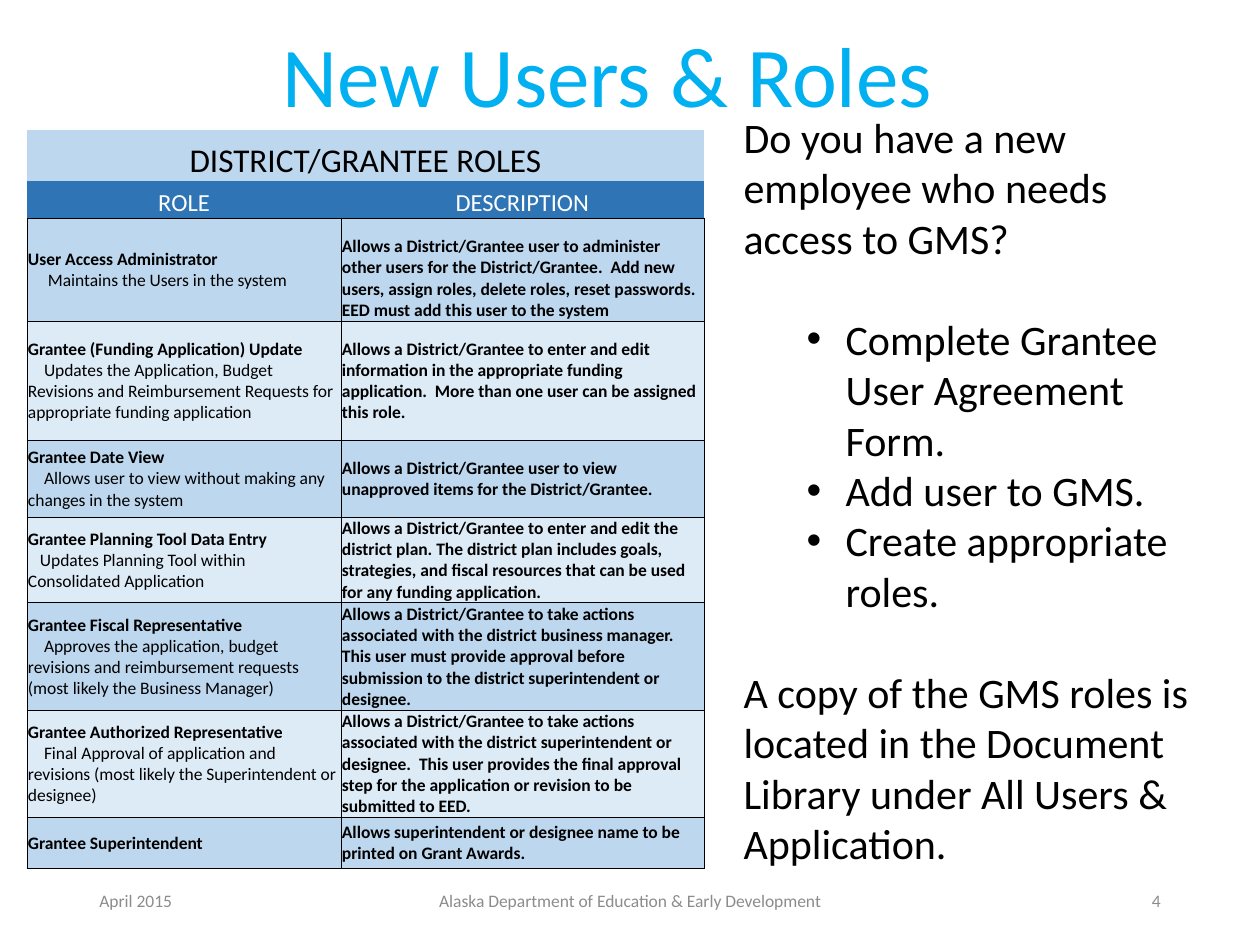
from dataclasses import dataclass

from lxml.etree import SubElement
from pptx import Presentation
from pptx.dml.color import RGBColor
from pptx.enum.text import MSO_ANCHOR, MSO_AUTO_SIZE, PP_ALIGN
from pptx.oxml.ns import qn
from pptx.util import Emu, Pt

PX_PER_INCH = 126


def px(n):
    return Emu(round(n * 914400 / PX_PER_INCH))


@dataclass(frozen=True)
class Theme:
    font: str = "Calibri"
    accent: str = "00B0F0"
    ink: str = "000000"
    white: str = "FFFFFF"
    muted: str = "8C8C8C"
    header: str = "2F75B5"
    band_dark: str = "BDD7EE"
    band_light: str = "DDEBF7"
    title: float = 48.6
    body: float = 24
    table_title: float = 19
    table_header: float = 14
    small: float = 10
    border: float = 0.5


# Role, first-line indent in px, what the role does, description
ROLES = [
    ("User Access Administrator", 20, "Maintains the Users in the system",
     "Allows a District/Grantee user to administer other users for the District/Grantee.  "
     "Add new users, assign roles, delete roles, reset passwords.  "
     "EED must add this user to the system"),
    ("Grantee (Funding Application) Update", 16,
     "Updates the Application, Budget Revisions and Reimbursement Requests for "
     "appropriate funding application",
     "Allows a District/Grantee to enter and edit information in the appropriate funding "
     "application.  More than one user can be assigned this role."),
    ("Grantee Date View", 16, "Allows user to view without making any changes in the system",
     "Allows a District/Grantee user to view unapproved items for the District/Grantee."),
    ("Grantee Planning Tool Data Entry", 12,
     "Updates Planning Tool within Consolidated Application",
     "Allows a District/Grantee to enter and edit the district plan. The district plan "
     "includes goals, strategies, and fiscal resources that can be used for any funding "
     "application."),
    ("Grantee Fiscal Representative", 16,
     "Approves the application, budget revisions and reimbursement requests "
     "(most likely the Business Manager)",
     "Allows a District/Grantee to take actions associated with the district business "
     "manager.  This user must provide approval before submission to the district "
     "superintendent or designee."),
    ("Grantee Authorized Representative", 16,
     "Final Approval of application and revisions "
     "(most likely the Superintendent or designee)",
     "Allows a District/Grantee to take actions associated with the district superintendent "
     "or designee.  This user provides the final approval step for the application or "
     "revision to be submitted to EED."),
    ("Grantee Superintendent", 0, "",
     "Allows superintendent or designee name to be printed on Grant Awards."),
]
COLS = [314, 363]
ROWS = [51, 37, 103, 119, 77, 85, 106, 106, 51]

# Text, bulleted, blank line before
BODY = [
    ("Do you have a new employee who needs access to GMS?", False, False),
    ("Complete Grantee User Agreement Form.", True, True),
    ("Add user to GMS.", True, False),
    ("Create appropriate roles.", True, False),
    ("A copy of the GMS roles is located in the Document Library under All Users & "
     "Application.", False, True),
]
FOOTER = [
    ("April 2015", 87, 284, PP_ALIGN.LEFT),
    ("Alaska Department of Education & Early Development", 417, 426, PP_ALIGN.CENTER),
    ("4", 890, 283, PP_ALIGN.RIGHT),
]


class SlideBuilder:
    def __init__(self, s, theme):
        self.s, self.theme = s, theme

    def run(self, p, text, size, color, bold=False):
        r = p.add_run()
        r.text = text
        r.font.name, r.font.size, r.font.bold = self.theme.font, Pt(size), bold
        r.font.color.rgb = RGBColor.from_string(color)

    def paragraph(self, tf, first, align=PP_ALIGN.LEFT, margin=0, indent=0):
        p = tf.paragraphs[0] if first else tf.add_paragraph()
        p.alignment = align
        pPr = p._p.get_or_add_pPr()
        pPr.set("marL", str(px(margin)))
        pPr.set("indent", str(px(indent)))
        return p

    def place(self, sp, x, y, w, h, anchor):
        sp.left, sp.top, sp.width, sp.height = map(px, (x, y, w, h))
        tf = sp.text_frame
        tf.word_wrap, tf.auto_size = True, MSO_AUTO_SIZE.NONE
        tf.vertical_anchor = anchor
        return tf

    def title(self, text, *box):
        tf = self.place(self.s.shapes.title, *box, MSO_ANCHOR.MIDDLE)
        p = self.paragraph(tf, True, PP_ALIGN.CENTER)
        p.line_spacing = 0.7
        self.run(p, text, self.theme.title, self.theme.accent)

    def body(self, items, *box):
        tf = self.place(self.s.placeholders[1], *box, MSO_ANCHOR.TOP)
        for i, (text, bulleted, gap) in enumerate(items):
            margin, indent = (102, -39) if bulleted else (0, 0)
            p = self.paragraph(tf, i == 0, margin=margin, indent=indent)
            p.space_before = Pt(29 if gap else 0)
            pPr = p._p.get_or_add_pPr()
            if bulleted:
                SubElement(pPr, qn("a:buFont"), typeface="Arial")
                SubElement(pPr, qn("a:buChar"), char="•")
            else:
                SubElement(pPr, qn("a:buNone"))
            self.run(p, text, self.theme.body, self.theme.ink)

    def footer(self, text, x, w, align):
        box = (x, 876, w, 50)
        sp = self.s.shapes.add_textbox(*map(px, box))
        tf = self.place(sp, *box, MSO_ANCHOR.MIDDLE)
        self.run(self.paragraph(tf, True, align), text, self.theme.small, self.theme.muted)

    def cell(self, cell, fill, sides, anchor):
        tcPr = cell._tc.get_or_add_tcPr()
        for side in "LRTB":
            ln = SubElement(tcPr, qn(f"a:ln{side}"), w=str(Pt(self.theme.border)))
            if side in sides:
                color = SubElement(ln, qn("a:solidFill"))
                SubElement(color, qn("a:srgbClr"), val=self.theme.ink)
            else:
                SubElement(ln, qn("a:noFill"))
        cell.fill.solid()
        cell.fill.fore_color.rgb = RGBColor.from_string(fill)
        cell.margin_left = cell.margin_right = cell.margin_top = px(1)
        cell.margin_bottom = 0
        cell.vertical_anchor = anchor
        return cell.text_frame

    def header_cell(self, cell, text, size, color, fill, sides=""):
        tf = self.cell(cell, fill, sides, MSO_ANCHOR.BOTTOM)
        if text:
            self.run(self.paragraph(tf, True, PP_ALIGN.CENTER), text, size, color)

    def roles_table(self, x, y):
        t = self.theme
        frame = self.s.shapes.add_table(len(ROWS), len(COLS), px(x), px(y),
                                        px(sum(COLS)), px(sum(ROWS)))
        table = frame.table
        table.first_row = table.horz_banding = False
        for col, w in zip(table.columns, COLS):
            col.width = px(w)
        for row, h in zip(table.rows, ROWS):
            row.height = px(h)

        # Heading rows
        table.cell(0, 0).merge(table.cell(0, 1))
        for c, text in enumerate(("DISTRICT/GRANTEE ROLES", "")):
            self.header_cell(table.cell(0, c), text, t.table_title, t.ink, t.band_dark)
        for c, text in enumerate(("ROLE", "DESCRIPTION")):
            self.header_cell(table.cell(1, c), text, t.table_header, t.white, t.header, "B")

        # One banded row per role
        for i, (role, indent, duty, description) in enumerate(ROLES):
            fill = t.band_light if i % 2 else t.band_dark
            tf = self.cell(table.cell(i + 2, 0), fill, "LRTB", MSO_ANCHOR.MIDDLE)
            self.run(self.paragraph(tf, True), role, t.small, t.ink, True)
            if duty:
                self.run(self.paragraph(tf, False, indent=indent), duty, t.small, t.ink)
            anchor = MSO_ANCHOR.MIDDLE if i else MSO_ANCHOR.BOTTOM
            tf = self.cell(table.cell(i + 2, 1), fill, "LRTB", anchor)
            self.run(self.paragraph(tf, True), description, t.small, t.ink, True)


def main():
    prs = Presentation()
    prs.slide_width, prs.slide_height = px(1260), px(945)
    slide = SlideBuilder(prs.slides.add_slide(prs.slide_layouts[1]), Theme())
    for item in FOOTER:
        slide.footer(*item)
    slide.body(BODY, 731, 105, 493, 776)
    slide.title("New Users & Roles", 40, 42, 1135, 88)
    slide.roles_table(27, 130)
    prs.save("out.pptx")


if __name__ == "__main__":
    main()
